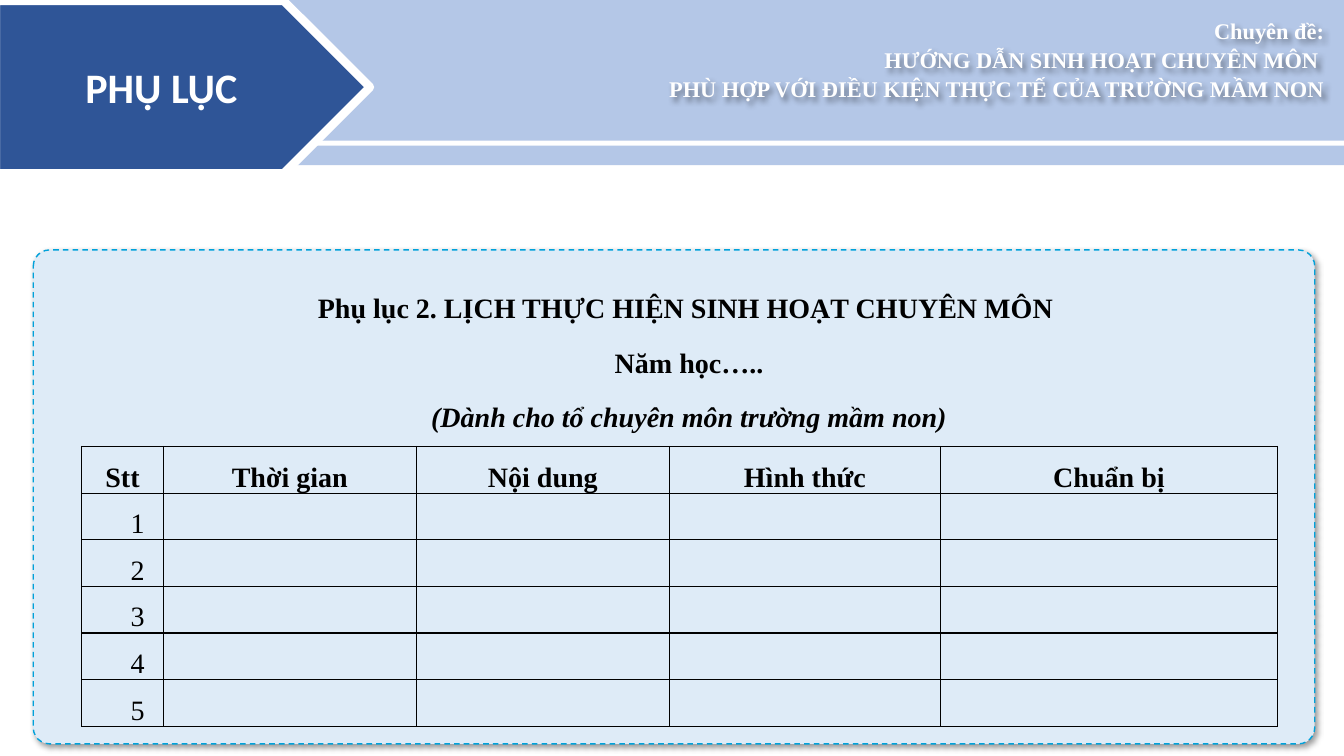
from lxml.etree import SubElement as Sub
from pptx import Presentation
from pptx.dml.color import RGBColor
from pptx.enum.dml import MSO_LINE_DASH_STYLE as Dash
from pptx.enum.shapes import MSO_SHAPE as Form
from pptx.enum.text import MSO_ANCHOR as Anchor, PP_ALIGN as Align
from pptx.oxml.ns import qn
from pptx.util import Inches, Pt

WIDE, HIGH = 13.33, 7.5
WHITE, BLACK = "FFFFFF", "000000"
SERIF = "Times New Roman"
HEAD = ["Chuyên đề:", "HƯỚNG DẪN SINH HOẠT CHUYÊN MÔN ",
        "PHÙ HỢP VỚI ĐIỀU KIỆN THỰC TẾ CỦA TRƯỜNG MẦM NON"]
INTRO = ["Phụ lục 2. LỊCH THỰC HIỆN SINH HOẠT CHUYÊN MÔN ", "Năm học…..",
         "(Dành cho tổ chuyên môn trường mầm non)"]
COLS = {"Stt": 0.81, "Thời gian": 2.51, "Nội dung": 2.51,
        "Hình thức": 2.69, "Chuẩn bị": 3.34}
ROWS, ROW = 5, 0.46


def tint(code):
    """Turn a hex string into a colour."""
    return RGBColor.from_string(code)


def inch(box):
    """Turn a box in inches into lengths."""
    return [Inches(n) for n in box]


def style(item, look):
    """Set attributes from a dict of values."""
    for name, value in look.items():
        setattr(item, name, value)


def write(para, text, size, color, face=SERIF, bold=True, italic=False,
          indent=0, **look):
    """Fill one paragraph with a formatted run."""
    if indent:
        para._p.get_or_add_pPr().set("indent", str(Inches(indent)))
    style(para, look)
    run = para.add_run()
    run.text = text
    style(run.font, {"size": Pt(size), "name": face, "bold": bold, "italic": italic})
    run.font.color.rgb = tint(color)


def fill(frame, lines, looks, **base):
    """Write several paragraphs, each with its own extra look."""
    for i, (line, look) in enumerate(zip(lines, looks)):
        para = frame.add_paragraph() if i else frame.paragraphs[0]
        write(para, line, **base, **look)


def block(slide, form, box, color):
    """Add a plain filled shape."""
    shape = slide.shapes.add_shape(form, *inch(box))
    shape.shadow.inherit = False
    shape.fill.solid()
    shape.fill.fore_color.rgb = tint(color)
    shape.line.fill.background()
    return shape


def edge(shape, color, width):
    """Outline a shape."""
    shape.line.color.rgb = tint(color)
    shape.line.width = Pt(width)


def shade(shape):
    """Cast a soft shadow down to the right."""
    shape.shadow.inherit = False
    glow = Sub(shape._element.spPr.find(qn("a:effectLst")), qn("a:outerShdw"),
               blurRad=str(Pt(4)), dist=str(Pt(3)), dir=str(45 * 60000),
               algn="tl", rotWithShape="0")
    Sub(Sub(glow, qn("a:srgbClr"), val=BLACK), qn("a:alpha"), val="40000")


def banner(slide, box):
    """Draw the top band with its rule and heading."""
    left, top, width, height = box
    block(slide, Form.RECTANGLE, box, "B4C7E7")
    start = left + width / 6
    block(slide, Form.RECTANGLE,
          (start, top + 0.85 * height, left + width - start, 0.05), WHITE)
    text = slide.shapes.add_textbox(*inch((left + 6.36, top + 0.19, 6.87, 0.81)))
    style(text.text_frame, {"word_wrap": True, "vertical_anchor": Anchor.MIDDLE})
    gap = {"space_before": Pt(1.5)}
    fill(text.text_frame, HEAD, [{}, gap, gap], size=16, color=WHITE,
         alignment=Align.RIGHT)
    shade(text)


def badge(slide, box):
    """Draw the arrow tag and lay the title over it."""
    left, top, width, height = box
    edge(block(slide, Form.PENTAGON, box, "2F5597"), WHITE, 6)
    title = slide.shapes.title
    slide.shapes._spTree.append(title._element)
    place = inch((left, top, width - height / 4, height))
    style(title, dict(zip(("left", "top", "width", "height"), place)))
    title.text_frame.vertical_anchor = Anchor.MIDDLE
    write(title.text_frame.paragraphs[0], "PHỤ LỤC", 30, WHITE, "Calibri",
          alignment=Align.CENTER)


def card(slide, box):
    """Draw the dashed card with its three heading lines."""
    shape = block(slide, Form.ROUNDED_RECTANGLE, box, "DEEBF7")
    shape.adjustments[0] = 0.033
    edge(shape, "00A1DA", 1)
    shape.line.dash_style = Dash.DASH
    shade(shape)
    style(shape.text_frame, {"word_wrap": True, "vertical_anchor": Anchor.TOP,
                             "margin_top": Inches(0.19)})
    fill(shape.text_frame, INTRO, [{}, {}, {"italic": True}], size=20,
         color=BLACK, indent=0.3, alignment=Align.CENTER, line_spacing=1.5,
         space_after=Pt(3))


def frame(cell):
    """Clear a cell's fill and rule its four sides."""
    style(cell, {"margin_left": Inches(0.07), "margin_right": Inches(0.07),
                 "margin_top": 0, "margin_bottom": 0})
    props = cell._tc.get_or_add_tcPr()
    for side in ("lnL", "lnR", "lnT", "lnB"):
        line = Sub(props, qn("a:" + side), w=str(Pt(1)))
        Sub(Sub(line, qn("a:solidFill")), qn("a:srgbClr"), val=BLACK)
    cell.fill.background()


def plan(slide, left, top):
    """Add the schedule table with numbered empty rows."""
    box = left, top, sum(COLS.values()), ROW * (ROWS + 1)
    table = slide.shapes.add_table(ROWS + 1, len(COLS), *inch(box)).table
    style(table, {"first_row": False, "horz_banding": False})
    for row in table.rows:
        row.height = Inches(ROW)
    for cell in table.iter_cells():
        frame(cell)
    base = {"size": 20, "color": BLACK, "alignment": Align.CENTER, "line_spacing": 1.5}
    for i, (name, width) in enumerate(COLS.items()):
        table.columns[i].width = Inches(width)
        write(table.cell(0, i).text_frame.paragraphs[0], name, **base)
    for n in range(1, ROWS + 1):
        write(table.cell(n, 0).text_frame.paragraphs[0], str(n), bold=False,
              indent=0.3, **base)


def main():
    """Build and save the slide."""
    deck = Presentation()
    style(deck, {"slide_width": Inches(WIDE), "slide_height": Inches(HIGH)})
    slide = deck.slides.add_slide(deck.slide_layouts[5])
    banner(slide, (0, 0, WIDE, 1.64))
    badge(slide, (-0.04, 0.01, 3.71, 1.71))
    card(slide, (0.33, 2.48, 12.71, 4.9))
    plan(slide, 0.81, 4.43)
    deck.save("out.pptx")


if __name__ == "__main__":
    main()
